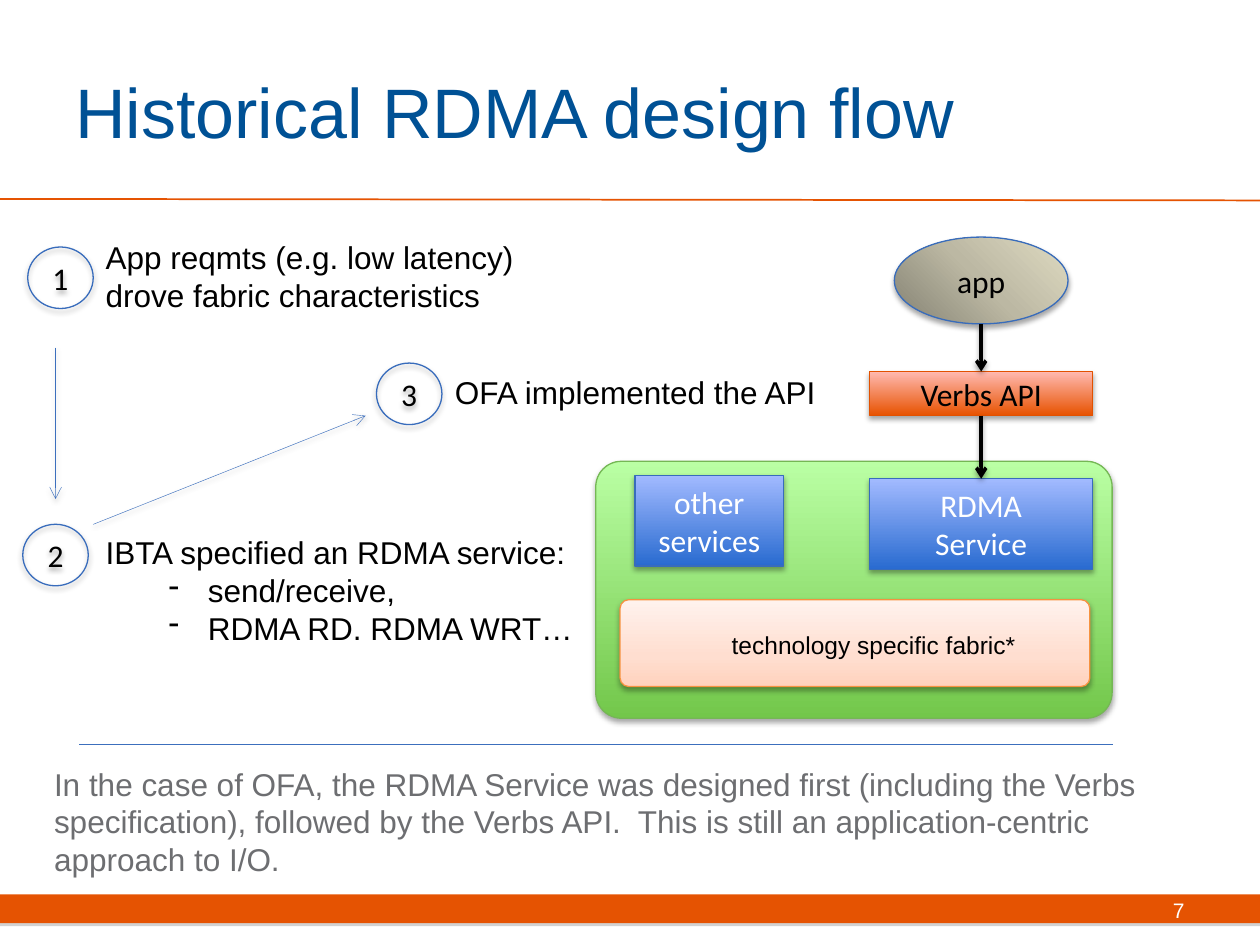
"""Build the slide on the historical RDMA design flow."""
from copy import deepcopy
from lxml.etree import SubElement as Sub
from pptx import Presentation
from pptx.dml.color import RGBColor
from pptx.enum.shapes import MSO_CONNECTOR as Conn, MSO_SHAPE as Shape
from pptx.enum.text import MSO_ANCHOR as Anchor, PP_ALIGN as Align
from pptx.oxml.ns import qn
from pptx.util import Cm, Pt

rgb = RGBColor.from_string
blue = [(0, "296BD0"), (1, "A2BAFF")]
green = [(0, "73C74B"), (1, "BAFFA4")]
red = [(0, "E75200"), (1, "FFB9B0")]
peach = [(0, "FFD2BD"), (0.35, "FFDED0"), (1, "FFF2ED")]
sand = [(0, "848273"), (0.5, "BCB8A3"), (1, "DFDBC2")]


def shade(item, tone="000000", alpha=35, blur=3.1, dist=1.8):
    """Give an item a soft shadow below it, or none if tone is empty."""
    props = item._element.spPr
    list_ = Sub(props, qn("a:effectLst"))
    if tone:
        drop = Sub(list_, qn("a:outerShdw"), blurRad=str(Pt(blur)), dist=str(Pt(dist)),
                   dir="5400000", rotWithShape="0")
        hue = Sub(drop, qn("a:srgbClr"), val=tone)
        Sub(hue, qn("a:alpha"), val=str(alpha * 1000))


def write(item, lines, tone, size=18, name="Arial", align=Align.LEFT,
          anchor=Anchor.TOP, wrap=True):
    """Fill an item with paragraphs of one format."""
    frame = item.text_frame
    frame.text = "\n".join(lines)
    for key, val in {"word_wrap": wrap, "vertical_anchor": anchor}.items():
        setattr(frame, key, val)
    for para in frame.paragraphs:
        para.alignment = align
        for run in para.runs:
            run.font.color.rgb = rgb(tone)
            for key, val in {"size": Pt(size), "name": name}.items():
                setattr(run.font, key, val)


deck = Presentation()
for key, val in {"slide_width": Cm(25.4), "slide_height": Cm(19.05)}.items():
    setattr(deck, key, val)
slide = deck.slides.add_slide(deck.slide_layouts[6])
shapes = slide.shapes

bar = shapes.add_shape(Shape.RECTANGLE, Cm(0), Cm(18.03), Cm(25.4), Cm(0.58))
bar.fill.solid()
bar.fill.fore_color.rgb = rgb("E55302")
bar.line.fill.background()
bar.shadow.inherit = False
bar._element.spPr.remove(bar._element.spPr.find(qn("a:effectLst")))
shade(bar, "808080", blur=0)

boxes = {}
for key, kind, box, fill, angle, edge, lines, tone in [
    ("stack", Shape.ROUNDED_RECTANGLE, (12.01, 9.3, 10.41, 5.18), green, 90, "75B755", [], ""),
    ("fabric", Shape.ROUNDED_RECTANGLE, (12.5, 12.09, 9.47, 1.75), peach, 90, "F69240", [], ""),
    ("app", Shape.OVAL, (18.03, 4.78, 3.5, 1.75), sand, 45, "386CBC", ["app"], "000000"),
    ("rdma", Shape.RECTANGLE, (17.53, 9.65, 4.5, 1.83), blue, 90, "386CBC",
     ["RDMA", "Service"], "FFFFFF"),
    ("verbs", Shape.RECTANGLE, (17.53, 7.49, 4.5, 0.89), red, 90, "E25100",
     ["Verbs API"], "000000"),
    ("other", Shape.RECTANGLE, (12.8, 9.58, 3, 1.83), blue, 90, "386CBC",
     ["other", "services"], "FFFFFF"),
    ("one", Shape.OVAL, (0.56, 4.98, 1.32, 1.24), None, 0, "386CBC", ["1"], "000000"),
    ("two", Shape.OVAL, (0.46, 10.57, 1.32, 1.24), None, 0, "386CBC", ["2"], "000000"),
    ("three", Shape.OVAL, (7.59, 7.32, 1.32, 1.24), None, 0, "386CBC", ["3"], "000000"),
]:
    item = boxes[key] = shapes.add_shape(kind, *map(Cm, box))
    if kind == Shape.ROUNDED_RECTANGLE:
        item.adjustments[0] = 0.1
    if fill:
        item.fill.gradient()
        item.fill.gradient_angle = angle
        stops = item._element.spPr.find(".//" + qn("a:gsLst"))
        for _ in fill[2:]:
            stops.append(deepcopy(stops[-1]))
        for stop, (place, hue) in zip(item.fill.gradient_stops, fill):
            stop.color.rgb = rgb(hue)
            stop.position = place
    else:
        item.fill.background()
    item.line.color.rgb = rgb(edge)
    item.line.width = Pt(0.75)
    shade(item)
    if lines:
        write(item, lines, tone, name="Calibri", align=Align.CENTER, anchor=Anchor.MIDDLE)

for ends, tone, width, head, start, stop in [
    ((0, 4.01, 25.4, 4.04), "E55302", 1, False, None, None),
    ((1.6, 15.01, 22.43, 15.01), "3C6FBD", 0.25, False, None, None),
    ((19.78, 6.53, 19.78, 7.49), "000000", 2, True, None, "verbs"),
    ((19.78, 8.38, 19.78, 9.65), "000000", 2, True, "verbs", "rdma"),
    ((1.12, 7.01, 1.12, 10.06), "3C6FBD", 0.25, True, None, None),
    ((1.88, 10.57, 7.37, 8.38), "3C6FBD", 0.25, True, None, None),
]:
    wire = shapes.add_connector(Conn.STRAIGHT, *map(Cm, ends))
    wire.line.color.rgb = rgb(tone)
    wire.line.width = Pt(width)
    if head:
        Sub(wire._element.spPr.find(qn("a:ln")), qn("a:tailEnd"), type="arrow")
    if start:
        wire.begin_connect(boxes[start], 2)
    if stop:
        wire.end_connect(boxes[stop], 0)
    shade(wire, "" if tone == "E55302" else "000000", 38, dist=1.6)

notes = {}
for key, box, lines, tone, fmt in [
    ("title", (1.27, 0.64, 20.75, 3.18), ["Historical RDMA design flow"], "005195",
     {"size": 40, "anchor": Anchor.MIDDLE}),
    ("page", (18.21, 17.83, 5.92, 1.02), ["7"], "FFFFFF",
     {"size": 12, "align": Align.RIGHT, "anchor": Anchor.MIDDLE}),
    ("needs", (1.88, 4.67, 10.13, 1.8),
     ["App reqmts (e.g. low latency) drove fabric characteristics"], "000000", {}),
    ("service", (1.88, 10.62, 15.8, 2.57),
     ["IBTA specified an RDMA service:", "send/receive,", "RDMA RD. RDMA WRT…"],
     "000000", {}),
    ("build", (8.92, 7.39, 9.04, 1.02), ["OFA implemented the API"], "000000", {}),
    ("sum", (0.84, 15.29, 23.7, 2.57),
     ["In the case of OFA, the RDMA Service was designed first (including the Verbs "
      "specification), followed by the Verbs API.  This is still an application-centric "
      "approach to I/O."], "6D6E71", {}),
    ("label", (14.5, 12.57, 6.27, 0.86), ["technology specific fabric*"], "000000",
     {"size": 14, "wrap": False}),
]:
    notes[key] = shapes.add_textbox(*map(Cm, box))
    write(notes[key], lines, tone, **fmt)

for para in notes["service"].text_frame.paragraphs[1:]:
    para.level = 1
    props = para._p.get_or_add_pPr()
    for key, val in {"marL": Cm(2.06), "indent": Cm(-0.79)}.items():
        props.set(key, str(val))
    Sub(props, qn("a:buChar"), char="-")

deck.save("out.pptx")
